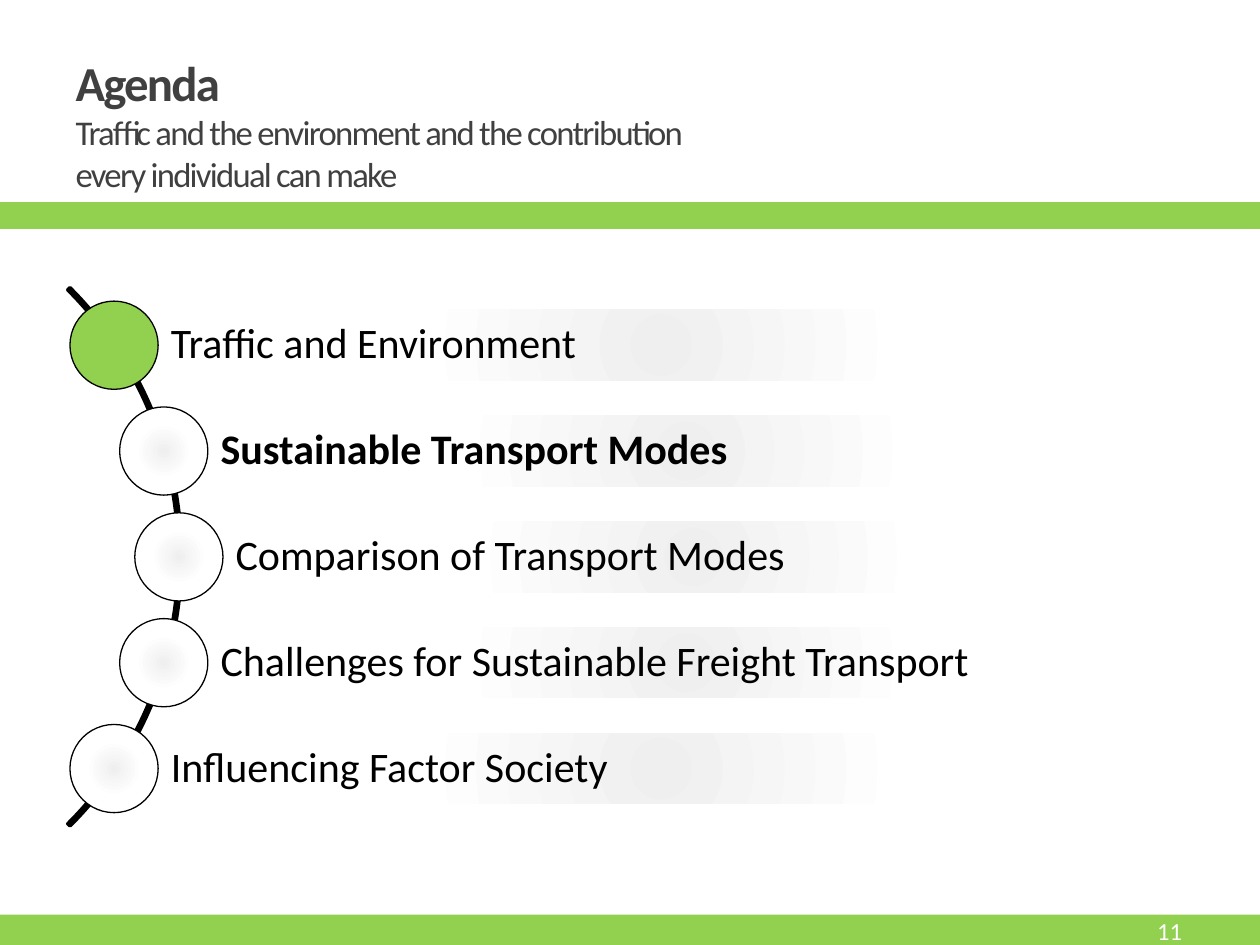
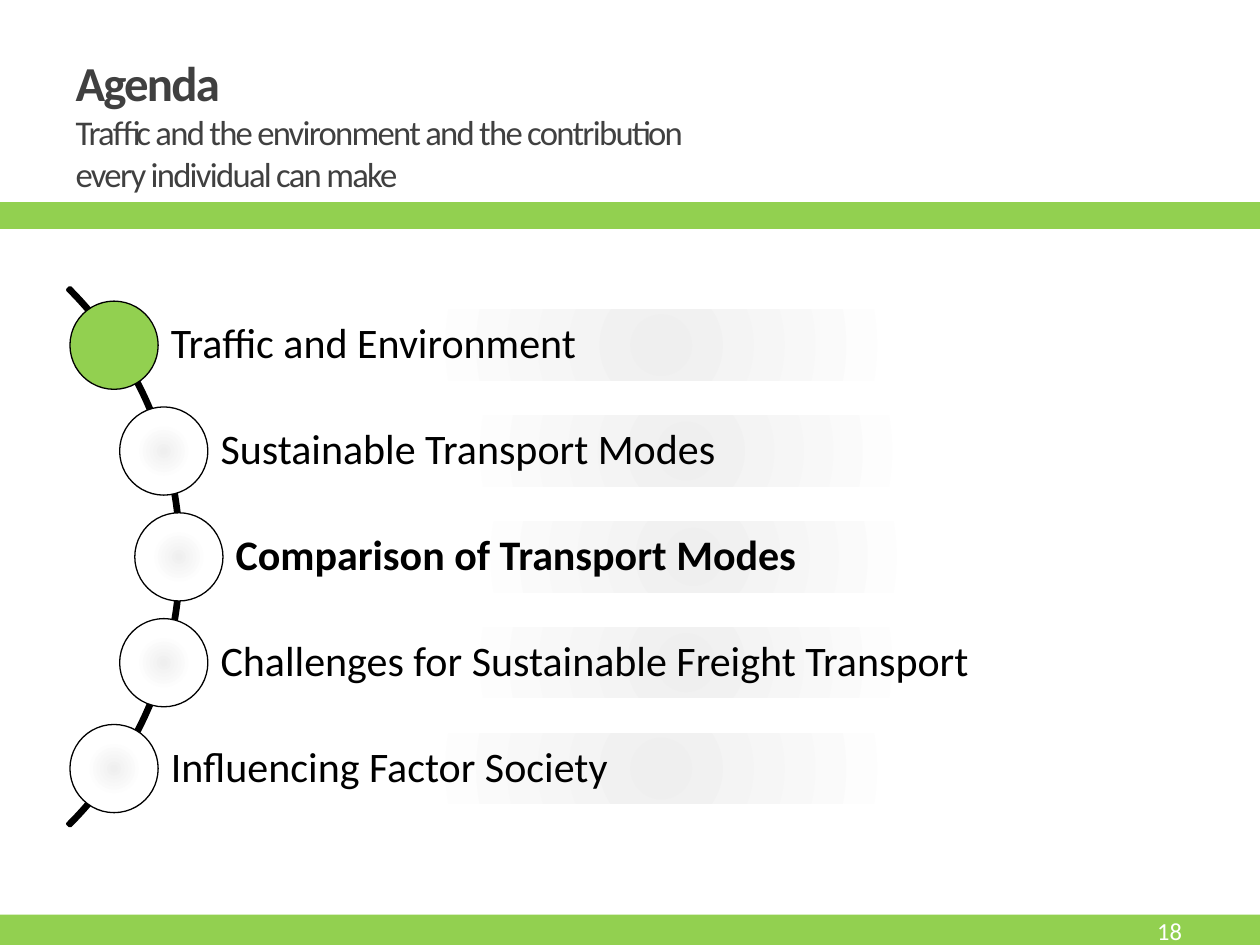
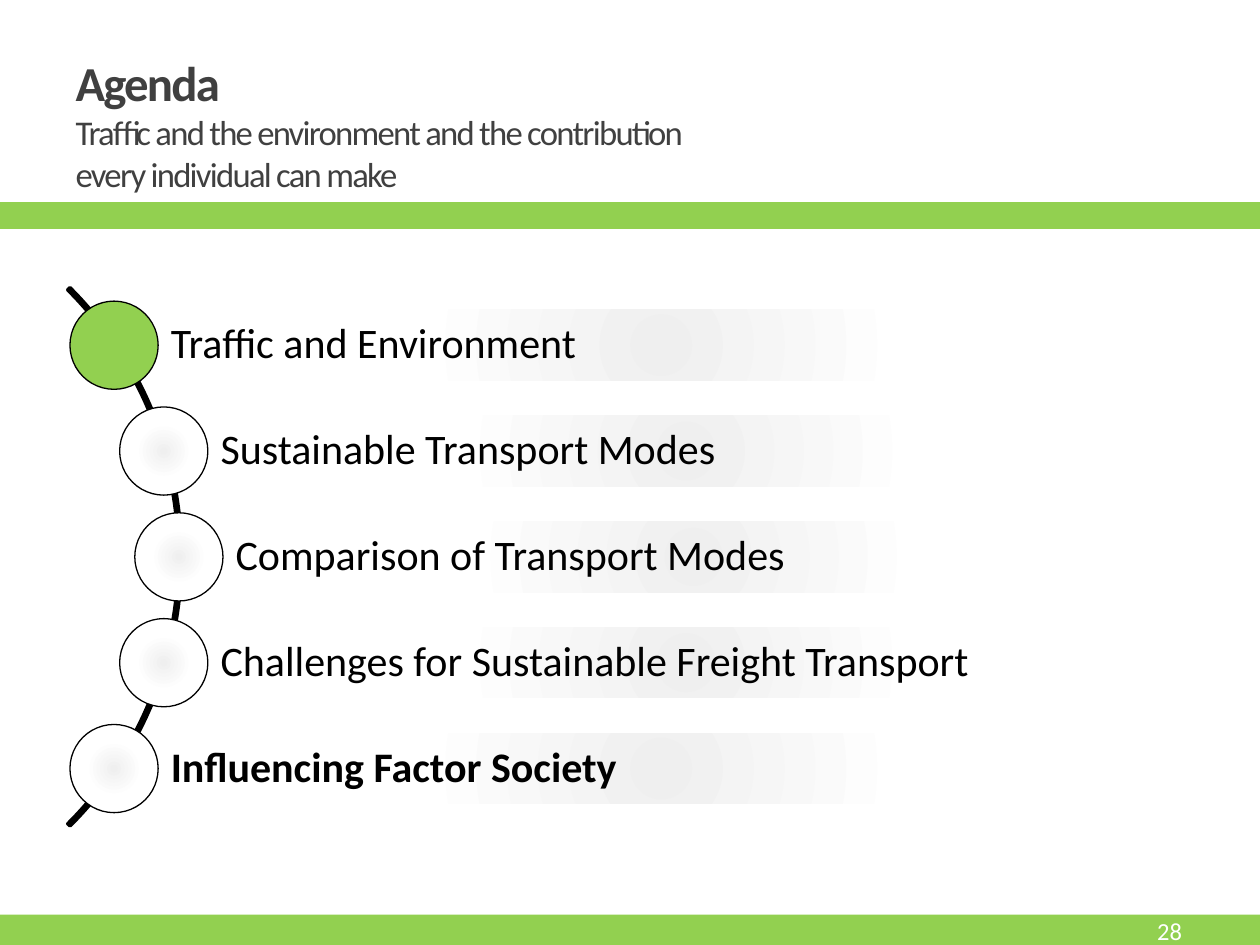
import math
from dataclasses import dataclass

import pptx
import pptx.dml.color
import pptx.enum.shapes
import pptx.enum.text
import pptx.oxml
import pptx.oxml.ns
import pptx.util

HEADING = "Agenda "
SUBHEADING = "Traffic and the environment and the contribution every individual can make"
TOPICS = [
    "Traffic and Environment",
    "Sustainable Transport Modes",
    "Comparison of Transport Modes",
    "Challenges for Sustainable Freight Transport",
    "Influencing Factor Society",
]
AGENDAS = [
    {"number": "11", "current": 1},
    {"number": "18", "current": 2},
    {"number": "28", "current": 4},
]


@dataclass(frozen=True)
class Theme:
    font: str = "Calibri"
    green: str = "92D050"
    white: str = "FFFFFF"
    black: str = "000000"
    title: str = "404040"
    glow: str = "EFEFEF"
    heading_size: float = 27.9
    subheading_size: float = 19.8
    topic_size: float = 24
    number_size: float = 14
    heavy_line: float = 2.08
    fine_line: float = 0.75


THEME = Theme()
WIDTH, HEIGHT = 10, 7.5
BANDS = [
    ((-0.04, 7.26, 10.16, 0.5), THEME.green, None),
    ((0, 0.24, WIDTH, 0.25), THEME.white, None),
    ((0, 1.62, 10.12, 0.18), THEME.green, THEME.green),
]
TITLE_BOX = (0.5, 0.44, 5.21, 1.08)
NUMBER_BOX = (8.31, 7.21, 1.17, 0.36)
ARC_CENTRE_X, ARC_CENTRE_Y = -1.58, 4.42
ARC_RADIUS, DOT_ORBIT = 3.02, 3
ROW_PITCH, BAR_HEIGHT, BAR_RIGHT = 0.84, 0.56, 9.59
DOT_SIZE = 0.7
BAR_INSETS = (0.45, 0.07, 0.07, 0.07)
SHAPES = pptx.enum.shapes.MSO_SHAPE
MIDDLE = pptx.enum.text.MSO_ANCHOR.MIDDLE
ALIGN = pptx.enum.text.PP_ALIGN


def colour(code):
    return pptx.dml.color.RGBColor.from_string(code)


def inches(lengths):
    return [pptx.util.Inches(length) for length in lengths]


def glow_fill(shape):
    stops = "".join(
        f'<a:gs pos="{share * 1000}"><a:srgbClr val="{code}"/></a:gs>'
        for share, code in [(0, THEME.glow), (45, THEME.white), (100, THEME.white)]
    )
    gradient = pptx.oxml.parse_xml(
        f'<a:gradFill {pptx.oxml.ns.nsdecls("a")} rotWithShape="1"><a:gsLst>{stops}</a:gsLst>'
        '<a:path path="circle">'
        '<a:fillToRect l="100000" t="100000" r="100000" b="100000"/></a:path></a:gradFill>'
    )
    shape.fill.background()
    properties = shape.element.spPr
    properties.replace(properties.find(pptx.oxml.ns.qn("a:noFill")), gradient)


def add_figure(page, kind, place, fill=None, line=None, weight=THEME.fine_line):
    shape = page.shapes.add_shape(kind, *inches(place))
    shape.shadow.inherit = False
    if fill:
        shape.fill.solid()
        shape.fill.fore_color.rgb = colour(fill)
    else:
        glow_fill(shape)
    if line:
        shape.line.color.rgb = colour(line)
        shape.line.width = pptx.util.Pt(weight)
    else:
        shape.line.fill.background()
    return shape


def add_span(para, text, size, code, bold=False):
    span = para.add_run()
    span.text = text
    span.font.name = THEME.font
    span.font.size = pptx.util.Pt(size)
    span.font.bold = bold
    span.font.color.rgb = colour(code)
    return span


def frame_para(box, align=ALIGN.LEFT):
    frame = box.text_frame
    frame.word_wrap = True
    frame.auto_size = pptx.enum.text.MSO_AUTO_SIZE.NONE
    frame.vertical_anchor = MIDDLE
    para = frame.paragraphs[0]
    para.alignment = align
    return para


def move_bands_to_layout(page):
    tree = page.slide_layout.shapes.element
    for order, (place, fill, line) in enumerate(BANDS):
        band = add_figure(page, SHAPES.RECTANGLE, place, fill, line, THEME.heavy_line)
        band.element.nvSpPr.cNvPr.set("id", str(100 + order))
        tree.append(band.element)


def add_title(page):
    box = page.shapes.title
    box.left, box.top, box.width, box.height = inches(TITLE_BOX)
    para = frame_para(box)
    heading = add_span(para, HEADING, THEME.heading_size, THEME.title, True)
    para.add_line_break()
    subheading = add_span(para, SUBHEADING, THEME.subheading_size, THEME.title)
    for span in (heading, subheading):
        span.font._element.set("spc", "-100")


def add_number(page, number):
    box = page.shapes.add_textbox(*inches(NUMBER_BOX))
    add_span(frame_para(box, ALIGN.RIGHT), number, THEME.number_size, THEME.white)


def add_arc(page):
    place = (ARC_CENTRE_X - ARC_RADIUS, ARC_CENTRE_Y - ARC_RADIUS, 2 * ARC_RADIUS, 2 * ARC_RADIUS)
    arc = add_figure(page, SHAPES.BLOCK_ARC, place, THEME.black, THEME.black, THEME.heavy_line)
    for index, value in enumerate((189, 27, 0.004)):
        arc.adjustments[index] = value


def add_topic(page, row, topic, current):
    drop = (row - (len(TOPICS) - 1) / 2) * ROW_PITCH
    x = ARC_CENTRE_X + math.sqrt(DOT_ORBIT**2 - drop**2)
    y = ARC_CENTRE_Y + drop
    bar = add_figure(page, SHAPES.RECTANGLE, (x, y - BAR_HEIGHT / 2, BAR_RIGHT - x, BAR_HEIGHT))
    para = frame_para(bar)
    para.line_spacing = 0.9
    frame = bar.text_frame
    frame.margin_left, frame.margin_top, frame.margin_right, frame.margin_bottom = inches(BAR_INSETS)
    add_span(para, topic, THEME.topic_size, THEME.black, row == current)
    dot = (x - DOT_SIZE / 2, y - DOT_SIZE / 2, DOT_SIZE, DOT_SIZE)
    add_figure(page, SHAPES.OVAL, dot, THEME.green if row == 0 else None, THEME.black)


def main():
    deck = pptx.Presentation()
    deck.slide_width, deck.slide_height = inches((WIDTH, HEIGHT))
    layout = deck.slide_layouts.get_by_name("Title Only")
    for order, agenda in enumerate(AGENDAS):
        page = deck.slides.add_slide(layout)
        if order == 0:
            move_bands_to_layout(page)
        add_title(page)
        add_number(page, agenda["number"])
        add_arc(page)
        for row, topic in enumerate(TOPICS):
            add_topic(page, row, topic, agenda["current"])
    deck.save("out.pptx")


if __name__ == "__main__":
    main()
